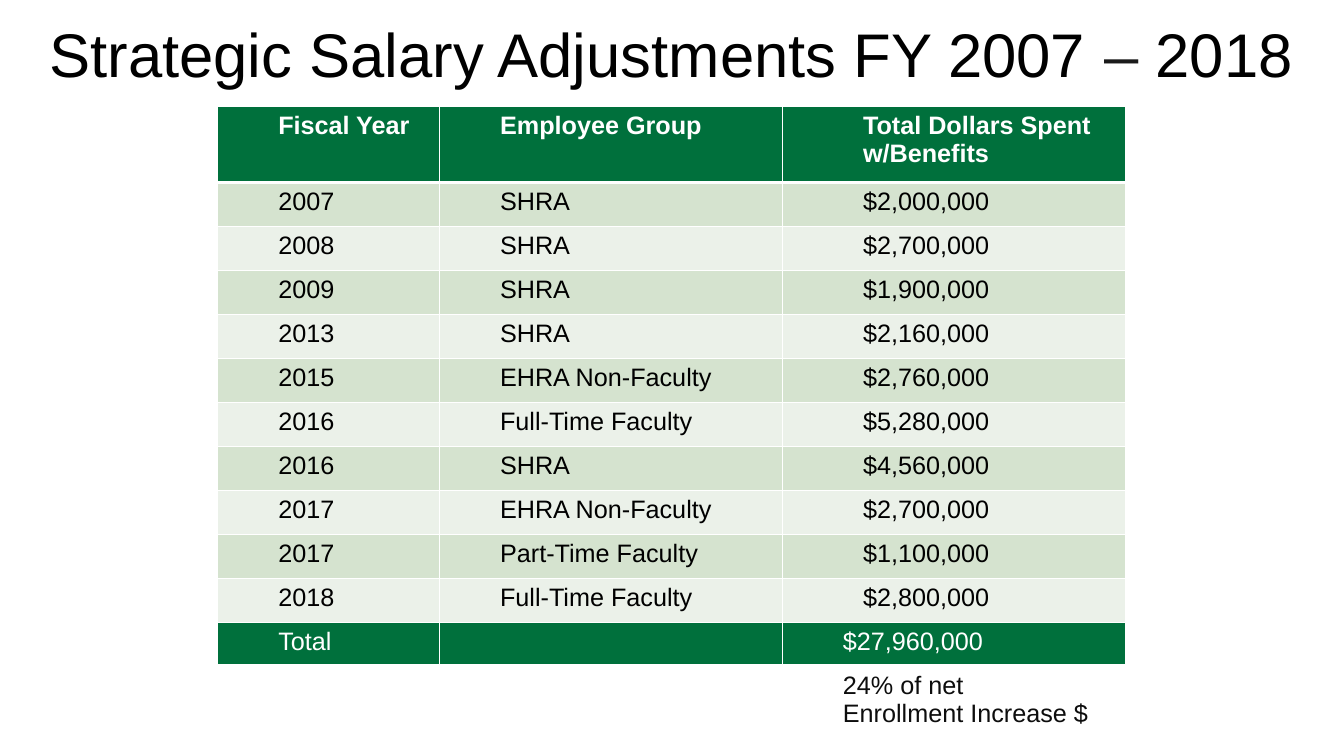
from pptx import Presentation, util as u
from pptx.dml.color import RGBColor
from pptx.enum import text
from pptx.oxml import parse_xml
from pptx.oxml.ns import nsdecls

# Content
TITLE = [("Strategic Salary Adjustments FY 2007", "black"), (" – ", "dash"), ("2018", "black")]
HEADINGS = ("Fiscal Year", "Employee Group", "Total Dollars Spent w/Benefits")
ADJUSTMENTS = [
    ("2007", "SHRA", "$2,000,000"),
    ("2008", "SHRA", "$2,700,000"),
    ("2009", "SHRA", "$1,900,000"),
    ("2013", "SHRA", "$2,160,000"),
    ("2015", "EHRA Non-Faculty", "$2,760,000"),
    ("2016", "Full-Time Faculty", "$5,280,000"),
    ("2016", "SHRA", "$4,560,000"),
    ("2017", "EHRA Non-Faculty", "$2,700,000"),
    ("2017", "Part-Time Faculty", "$1,100,000"),
    ("2018", "Full-Time Faculty", "$2,800,000"),
]
TOTAL = ("Total", "", "$27,960,000")
SHARE = ("", "", "24% of net \vEnrollment Increase $")

COLORS = {"black": "000000", "dash": "1A1A1A", "note": "0D0D0D", "white": "FFFFFF",
          "green": "00703C", "band": "D5E3CF", "pale": "EBF1E9"}

# Layout, in inches
SLIDE = (13.33, 7.5)
TITLE_BOX = (0.39, 0.08, 12.55, 0.98)
TABLE_AT = (2.16, 1.06)
COLUMNS = (2.2, 3.4, 3.4)
HEADER_HEIGHT, BODY_HEIGHT, SHARE_HEIGHT = 0.75, 4.8, 0.68
INDENT, DEEP_INDENT = 0.6, 0.8


def color(name):
    return RGBColor.from_string(COLORS[name])


def write(paragraph, words, size=18, ink="black", bold=False):
    """Add words to a paragraph, in one format."""
    for index, line in enumerate(words.split("\v")):
        if index:
            paragraph.add_line_break()
        run = paragraph.add_run()
        run.text = line
        run.font.name, run.font.size, run.font.bold = "Arial", u.Pt(size), bold
        run.font.color.rgb = color(ink)


def rule_cell(cell, top=1, bottom=1):
    """Draw white borders, with widths in points; they precede the fill."""
    widths = {"lnL": 1, "lnR": 1, "lnT": top, "lnB": bottom}
    for place, (side, width) in enumerate(widths.items()):
        cell._tc.get_or_add_tcPr().insert(place, parse_xml(
            f'<a:{side} {nsdecls("a")} w="{u.Pt(width)}"><a:solidFill>'
            f'<a:srgbClr val="{COLORS["white"]}"/></a:solidFill></a:{side}>'))


def add_title(slide):
    title = slide.shapes.title
    title.left, title.top, title.width, title.height = map(u.Inches, TITLE_BOX)
    frame = title.text_frame
    frame.word_wrap = True
    frame.auto_size = text.MSO_AUTO_SIZE.NONE
    frame.vertical_anchor = text.MSO_ANCHOR.MIDDLE
    heading = frame.paragraphs[0]
    heading.alignment = text.PP_ALIGN.LEFT
    heading.line_spacing = 0.9
    for words, ink in TITLE:
        write(heading, words, size=44, ink=ink)


def add_salary_table(slide):
    # Each row: values, fill, ink, height
    line = BODY_HEIGHT / (len(ADJUSTMENTS) + 1)
    rows = [(HEADINGS, "green", "white", HEADER_HEIGHT)]
    rows += [(values, ("band", "pale")[i % 2], "black", line)
             for i, values in enumerate(ADJUSTMENTS)]
    rows += [(TOTAL, "green", "white", line), (SHARE, None, "note", SHARE_HEIGHT)]

    height = sum(row[3] for row in rows)
    table = slide.shapes.add_table(len(rows), len(COLUMNS),
                                   *map(u.Inches, (*TABLE_AT, sum(COLUMNS), height))).table
    for column, width in zip(table.columns, COLUMNS):
        column.width = u.Inches(width)

    last = len(rows) - 1
    for r, (values, fill, ink, row_height) in enumerate(rows):
        table.rows[r].height = u.Inches(row_height)
        for c, words in enumerate(values):
            cell = table.cell(r, c)
            deep = c == 2 and r < last - 1
            cell.margin_left = u.Inches(DEEP_INDENT if deep else INDENT)
            if fill:
                cell.fill.solid()
                cell.fill.fore_color.rgb = color(fill)
            else:
                cell.fill.background()
            rule_cell(cell, top=3 if r in (1, last) else 1,
                      bottom=3 if r in (0, last - 1) else 1)
            if words:
                write(cell.text_frame.paragraphs[0], words, ink=ink, bold=r == 0)


def main():
    deck = Presentation()
    deck.slide_width, deck.slide_height = map(u.Inches, SLIDE)
    slide = deck.slides.add_slide(deck.slide_layouts.get_by_name("Title Only"))
    add_title(slide)
    add_salary_table(slide)
    deck.save("out.pptx")


if __name__ == "__main__":
    main()
